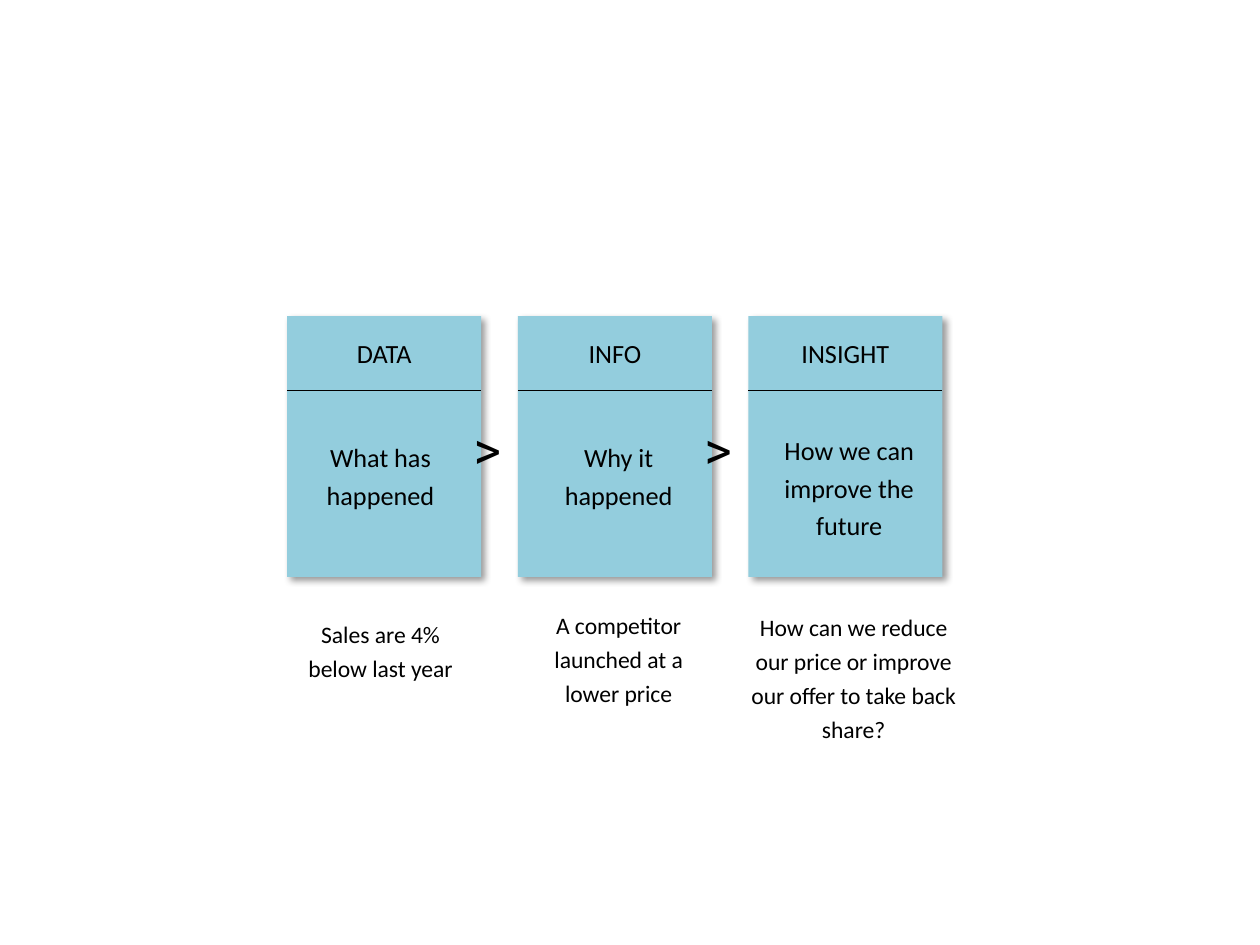
from dataclasses import dataclass

from lxml import etree
from pptx import Presentation
from pptx import util as u
from pptx.dml.color import RGBColor
from pptx.enum import shapes, text
from pptx.oxml.ns import qn


@dataclass(frozen=True)
class Theme:
    """Colours, fonts and type sizes of the slide."""
    card: RGBColor = RGBColor(0x93, 0xCD, 0xDD)
    ink: RGBColor = RGBColor(0, 0, 0)
    font: str = "Calibri"
    sign: str = "Roboto"
    head: float = 15
    note: float = 13.5
    mark: float = 30


THEME = Theme()
LEFT, TOP, WIDE, HIGH, STEP = 2.28, 2.51, 1.54, 2.07, 1.83
RULE = 3.1
STAGES = [
    ("DATA", ("What has happened", 0.12, 3.46, 1.24, 0.59),
     ("Sales are 4% below last year", 0.12, 4.74, 1.24, 0.81)),
    ("INFO", ("Why it happened", 0.18, 3.46, 1.24, 0.59),
     ("A competitor launched at a lower price", 0.18, 4.8, 1.24, 0.81)),
    ("INSIGHT", ("How we can improve the future", 0.18, 3.4, 1.24, 0.89),
     ("How can we reduce our price or improve our offer to take back share?",
      -0.05, 4.82, 1.77, 1.08)),
]


def inches(*sizes):
    """Turn numbers into lengths."""
    return [u.Inches(size) for size in sizes]


def add_card(slide, left):
    """Draw a filled card with a soft shadow."""
    card = slide.shapes.add_shape(
        shapes.MSO_SHAPE.RECTANGLE, *inches(left, TOP, WIDE, HIGH))
    card.fill.solid()
    card.fill.fore_color.rgb = THEME.card
    card.line.fill.background()
    card.shadow.inherit = False
    glow = etree.SubElement(
        card._element.spPr.find(qn("a:effectLst")), qn("a:outerShdw"),
        blurRad=str(u.Pt(4)), dist=str(u.Pt(3)), dir="2700000",
        algn="tl", rotWithShape="0")
    tint = etree.SubElement(glow, qn("a:srgbClr"), val=str(THEME.ink))
    etree.SubElement(tint, qn("a:alpha"), val="40000")


def add_rule(slide, left):
    """Draw the thin line under a card's heading."""
    rule = slide.shapes.add_connector(
        shapes.MSO_CONNECTOR.STRAIGHT, *inches(left, RULE, left + WIDE, RULE))
    rule.line.color.rgb = THEME.ink
    rule.line.width = u.Pt(0.75)
    etree.SubElement(rule._element.spPr, qn("a:effectLst"))


def add_text(slide, words, left, top, wide, high, size=THEME.head,
             font=THEME.font, align=text.PP_ALIGN.CENTER):
    """Place a wrapped, middle-anchored text and return its run."""
    box = slide.shapes.add_textbox(*inches(left, top, wide, high))
    frame = box.text_frame
    frame.word_wrap = True
    frame.auto_size = text.MSO_AUTO_SIZE.SHAPE_TO_FIT_TEXT
    frame.vertical_anchor = text.MSO_ANCHOR.MIDDLE
    frame.margin_left = frame.margin_right = 0
    frame.margin_top = frame.margin_bottom = 0
    para = frame.paragraphs[0]
    para.alignment = align
    para.line_spacing = 1.2
    run = para.add_run()
    run.text = words
    run.font.size = u.Pt(size)
    run.font.name = font
    run.font.color.rgb = THEME.ink
    return run


def add_sign(slide, left):
    """Place the sign that leads to the next card."""
    run = add_text(slide, ">", left, 3.22, 0.41, 0.58, THEME.mark,
                   THEME.sign, text.PP_ALIGN.JUSTIFY)
    run.font._element.set("spc", "-220")


def main():
    """Build the slide and save it."""
    deck = Presentation()
    deck.slide_width, deck.slide_height = inches(10, 7.5)
    slide = deck.slides.add_slide(deck.slide_layouts[6])
    lefts = [LEFT + STEP * step for step in range(len(STAGES))]
    for left, (head, body, note) in zip(lefts, STAGES):
        add_card(slide, left)
        add_text(slide, head, left + 0.18, 2.63, 1.18, 0.29)
        add_rule(slide, left)
        for part, size in ((body, THEME.head), (note, THEME.note)):
            words, shift, *place = part
            add_text(slide, words, left + shift, *place, size)
    for left in lefts[:-1]:
        add_sign(slide, left + 1.48)
    deck.save("out.pptx")


if __name__ == "__main__":
    main()
